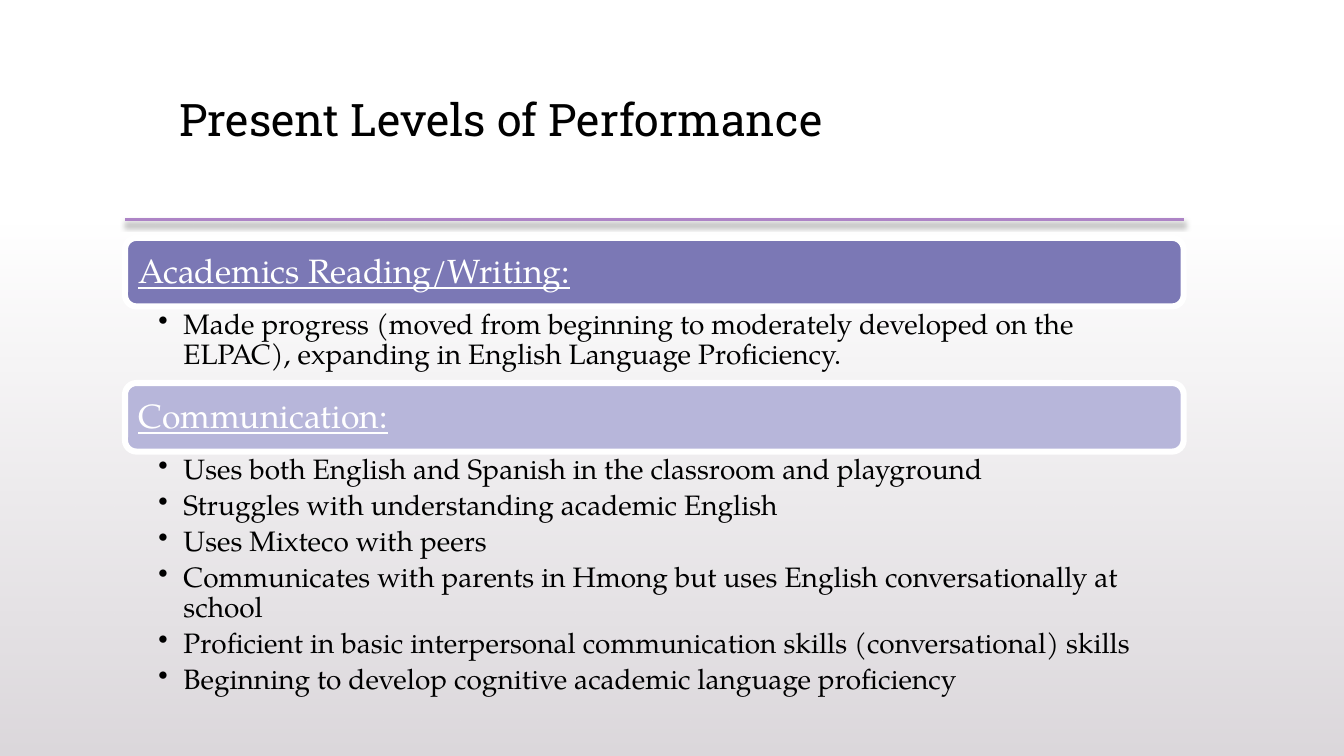
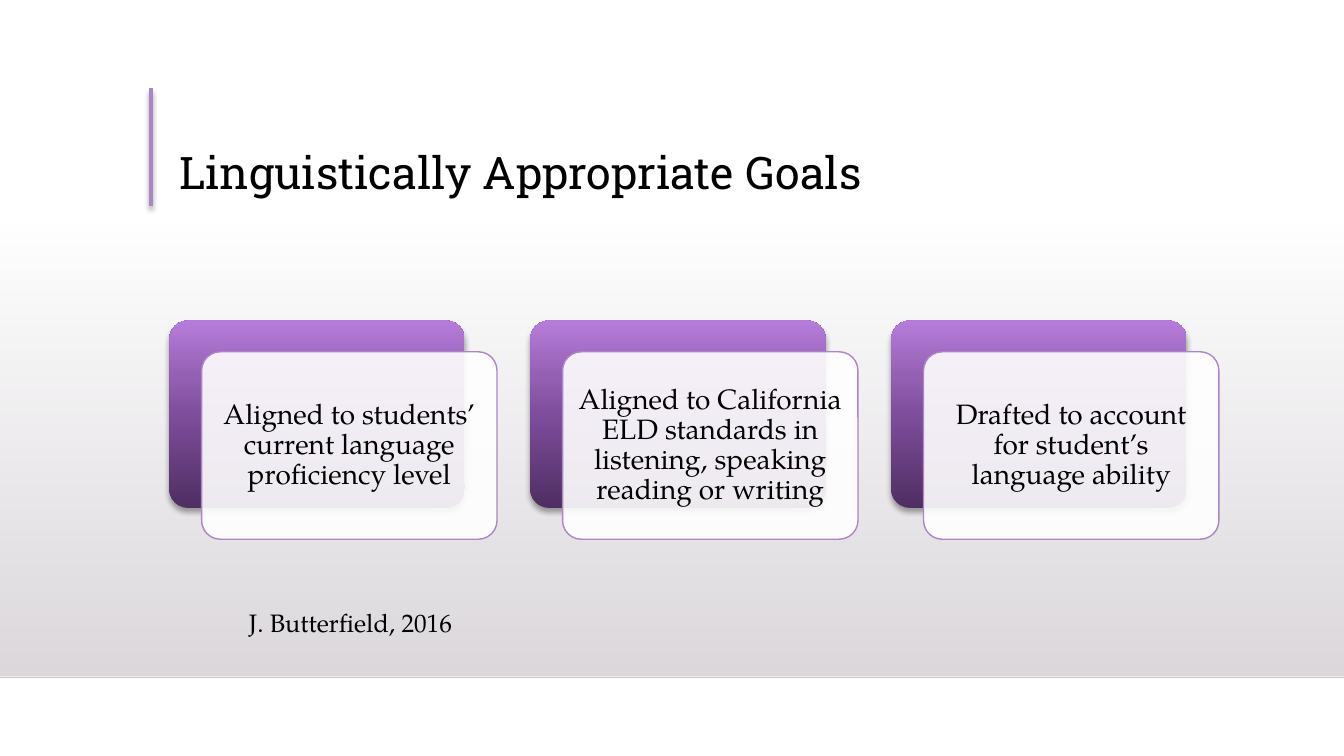
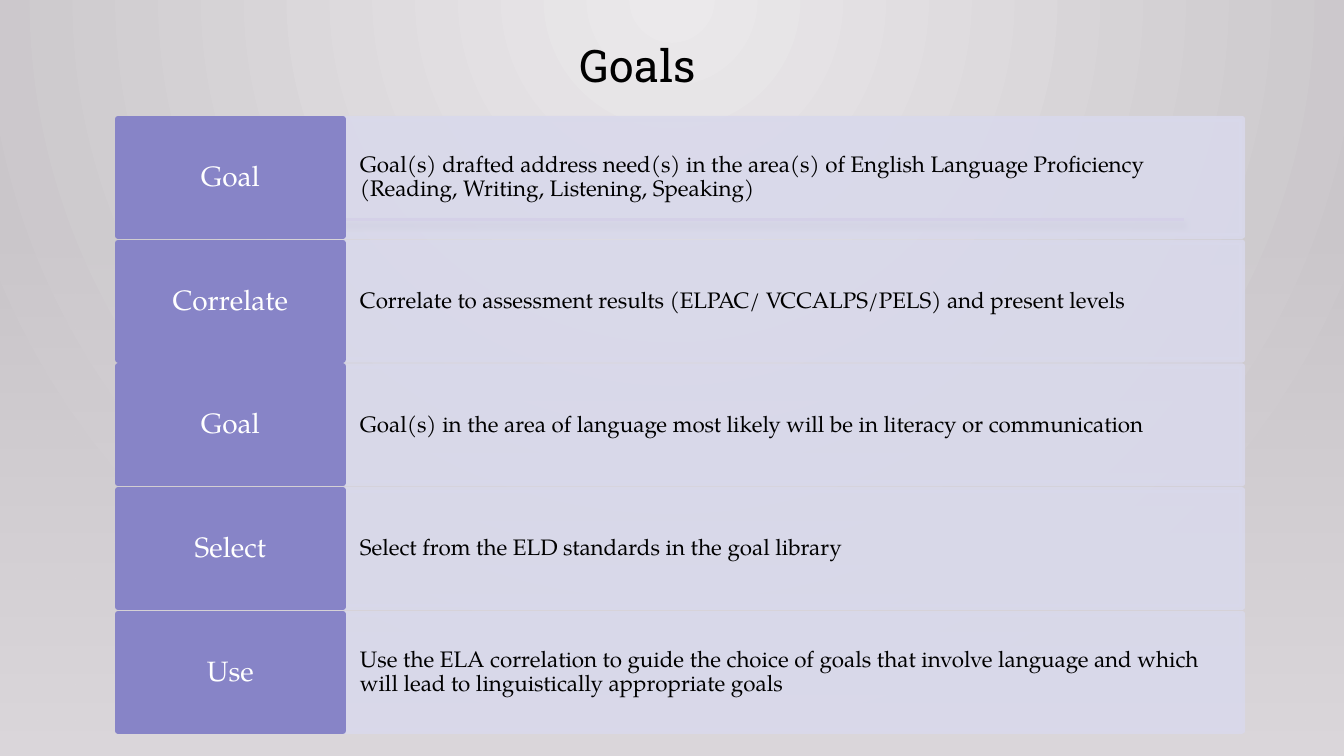
"""Build three slides on performance levels and linguistically appropriate goals."""
import lxml.etree
import pptx
import pptx.dml.color
import pptx.enum.shapes
import pptx.enum.text
import pptx.oxml.ns
import pptx.util

RGBColor = pptx.dml.color.RGBColor
Inches = pptx.util.Inches
Pt = pptx.util.Pt
qn = pptx.oxml.ns.qn
SHAPE = pptx.enum.shapes.MSO_SHAPE
ALIGN = pptx.enum.text.PP_ALIGN
ANCHOR = pptx.enum.text.MSO_ANCHOR

WIDTH, HEIGHT = 13.33, 7.5
TITLE_FONT, BODY_FONT = "Roboto Slab", "TeX Gyre Pagella"

BLACK = RGBColor(0x00, 0x00, 0x00)
WHITE = RGBColor(0xFF, 0xFF, 0xFF)
ACCENT = RGBColor(0xAD, 0x84, 0xC6)
MIST = RGBColor(0xDC, 0xD8, 0xDC)
GLOW = RGBColor(0xEB, 0xE9, 0xEB)
HAZE = RGBColor(0xC8, 0xC4, 0xC8)
HEADER_DARK = RGBColor(0x7B, 0x78, 0xB5)
HEADER_LIGHT = RGBColor(0xB7, 0xB6, 0xDA)
LABEL = RGBColor(0x87, 0x84, 0xC7)
PANEL = RGBColor(0xD9, 0xD9, 0xEB)

BAND_STOPS = [(0, MIST, 0), (100, MIST, 100)]
GLOW_STOPS = [(0, GLOW, 100), (100, HAZE, 100)]
CARD_STOPS = [
    (0, RGBColor(0x4F, 0x2E, 0x62), 100),
    (50, RGBColor(0x7E, 0x4D, 0x9C), 100),
    (70, RGBColor(0x94, 0x60, 0xB3), 100),
    (100, RGBColor(0xB6, 0x7C, 0xDA), 100),
]

LEVELS_TITLE = "Present Levels of Performance"
LEVELS = [
    ("Academics Reading/Writing:", HEADER_DARK, 2.36, 0.73, [
        "Made progress (moved from beginning to moderately developed on the "
        "ELPAC), expanding in English Language Proficiency.",
    ]),
    ("Communication:", HEADER_LIGHT, 3.8, 2.83, [
        "Uses both English and Spanish in the classroom and playground",
        "Struggles with understanding academic English",
        "Uses Mixteco with peers",
        "Communicates with parents in Hmong but uses English conversationally at school",
        "Proficient in basic interpersonal communication skills (conversational) skills",
        "Beginning to develop cognitive academic language proficiency",
    ]),
]

CARDS_TITLE = "Linguistically Appropriate Goals"
CARDS = [
    "Aligned to students’ current language proficiency level",
    "Aligned to California ELD standards in listening, speaking reading or writing",
    "Drafted to account for student’s language ability",
]
CARDS_SOURCE = "J. Butterfield, 2016"

GOALS_TITLE = "Goals"
GOALS = [
    ("Goal", "Goal(s) drafted address need(s) in the area(s) of English Language "
             "Proficiency (Reading, Writing, Listening, Speaking)"),
    ("Correlate", "Correlate to assessment results (ELPAC/ VCCALPS/PELS) and present levels"),
    ("Goal", "Goal(s) in the area of language most likely will be in literacy or communication"),
    ("Select", "Select from the ELD standards in the goal library"),
    ("Use", "Use the ELA correlation to guide the choice of goals that involve language "
            "and which will lead to linguistically appropriate goals"),
]


def add_element(parent, tag, **attributes):
    element = lxml.etree.SubElement(parent, qn(tag))
    for name, value in attributes.items():
        element.set(name, str(value))
    return element


def set_alpha(color_parent, percent):
    color = color_parent.find(".//" + qn("a:srgbClr"))
    add_element(color, "a:alpha", val=percent * 1000)


def set_gradient(fill, parent, stops, angle=None):
    fill.solid()
    fill.fore_color.rgb = stops[0][1]
    solid = parent.find(qn("a:solidFill"))
    gradient = lxml.etree.Element(qn("a:gradFill"), rotWithShape="1")
    stop_list = add_element(gradient, "a:gsLst")
    for position, color, opacity in stops:
        stop = add_element(stop_list, "a:gs", pos=position * 1000)
        add_element(stop, "a:srgbClr", val=color)
        if opacity < 100:
            set_alpha(stop, opacity)
    if angle is None:
        circle = add_element(gradient, "a:path", path="circle")
        add_element(circle, "a:fillToRect", l=43000, t=0, r=43000, b=100000)
    else:
        add_element(gradient, "a:lin", ang=angle * 60000, scaled=0)
    parent.replace(solid, gradient)


def add_shadow(effects):
    shadow = add_element(effects, "a:outerShdw", blurRad=Pt(4), dist=Pt(3),
                         dir=90 * 60000, algn="ctr", rotWithShape=0)
    add_element(shadow, "a:srgbClr", val=BLACK)
    set_alpha(shadow, 35)


def add_line(slide, start, end, color, width, opacity=100, shadow=False):
    points = [Inches(value) for value in (*start, *end)]
    line = slide.shapes.add_connector(pptx.enum.shapes.MSO_CONNECTOR.STRAIGHT, *points)
    line.line.color.rgb = color
    line.line.width = Pt(width)
    properties = line._element.spPr
    if opacity < 100:
        set_alpha(properties, opacity)
    effects = add_element(properties, "a:effectLst")
    if shadow:
        add_shadow(effects)


def add_box(slide, kind, area, fill=None, line=None, line_width=1, opacity=100):
    shape = slide.shapes.add_shape(kind, *[Inches(value) for value in area])
    shape.shadow.inherit = False
    properties = shape._element.spPr
    if fill is not None:
        shape.fill.solid()
        shape.fill.fore_color.rgb = fill
        if opacity < 100:
            set_alpha(properties.find(qn("a:solidFill")), opacity)
    if line is None:
        shape.line.fill.background()
    else:
        shape.line.color.rgb = line
        shape.line.width = Pt(line_width)
    return shape


def write(shape, texts, size, color=BLACK, font=BODY_FONT, align=ALIGN.LEFT,
          anchor=ANCHOR.MIDDLE, insets=(0.1, 0.05, 0.1, 0.05), spacing=0.9,
          bullets=False, underline=False):
    frame = shape.text_frame
    frame.word_wrap = True
    frame.vertical_anchor = anchor
    (frame.margin_left, frame.margin_top,
     frame.margin_right, frame.margin_bottom) = [Inches(value) for value in insets]
    frame.text = "\n".join(texts)
    for paragraph in frame.paragraphs:
        if bullets:
            properties = paragraph._p.get_or_add_pPr()
            properties.set("marL", str(Inches(0.25)))
            properties.set("indent", str(-Inches(0.25)))
            add_element(properties, "a:buChar", char="•")
            paragraph.space_after = Pt(4)
        paragraph.alignment = align
        paragraph.line_spacing = spacing
        for run in paragraph.runs:
            run.font.name = font
            run.font.size = Pt(size)
            run.font.color.rgb = color
            run.font.underline = underline


def add_text(slide, area, texts, size, **style):
    box = slide.shapes.add_textbox(*[Inches(value) for value in area])
    write(box, texts, size, **style)


def add_title(slide, text, area, align=ALIGN.LEFT):
    add_text(slide, area, [text], 32, font=TITLE_FONT, align=align, anchor=ANCHOR.BOTTOM)


def add_band(slide, top, bottom):
    band = add_box(slide, SHAPE.RECTANGLE, (0, top, WIDTH, bottom - top))
    set_gradient(band.fill, band._element.spPr, BAND_STOPS, 90)


def add_rule(slide):
    add_line(slide, (1.24, 2.18), (11.74, 2.18), ACCENT, 2.5, shadow=True)


def build_levels(slide):
    left, width, header_height = 1.24, 10.5, 0.68
    add_band(slide, 2.21, HEIGHT)
    add_rule(slide)
    add_title(slide, LEVELS_TITLE, (1.68, 0.88, 10.41, 0.62))
    for heading, color, top, list_height, points in LEVELS:
        header = add_box(slide, SHAPE.ROUNDED_RECTANGLE, (left, top, width, header_height),
                         color, WHITE, 4.33)
        write(header, [heading], 24, color=WHITE, insets=(0.1,) * 4, underline=True)
        add_text(slide, (left, top + header_height + 0.01, width, list_height), points, 20,
                 anchor=ANCHOR.TOP, insets=(0.33, 0.03, 0.16, 0.03), bullets=True)


def build_cards(slide):
    left, top, width, height, pitch = 1.68, 3.18, 2.93, 1.86, 3.58
    shift_right, shift_down = 0.32, 0.31
    add_band(slide, 2.2, 6.7)
    add_line(slide, (0, 6.72), (WIDTH, 6.72), BLACK, 1, opacity=20)
    add_line(slide, (1.5, 0.87), (1.5, 2.04), ACCENT, 3, shadow=True)
    add_title(slide, CARDS_TITLE, (1.68, 0.88, 10.41, 1.15))
    for index, text in enumerate(CARDS):
        x = left + index * pitch
        back = add_box(slide, SHAPE.ROUNDED_RECTANGLE, (x, top, width, height))
        set_gradient(back.fill, back._element.spPr, CARD_STOPS, 270)
        add_shadow(back._element.spPr.find(qn("a:effectLst")))
        front = add_box(slide, SHAPE.ROUNDED_RECTANGLE,
                        (x + shift_right, top + shift_down, width, height),
                        WHITE, ACCENT, 1, opacity=90)
        for card in (back, front):
            card.adjustments[0] = 0.1
        write(front, [text], 20, align=ALIGN.CENTER, insets=(0.08,) * 4)
    add_text(slide, (2.37, 5.98, 4.69, 0.4), [CARDS_SOURCE], 18,
             anchor=ANCHOR.TOP, spacing=1.0)


def build_goals(slide):
    left, label_width, panel_width, height = 1.17, 2.23, 8.92, 1.16
    first_top, last_top = 1.18, 6.09
    pitch = (last_top - first_top) / (len(GOALS) - 1)
    background = slide.background.fill
    background.solid()
    set_gradient(background, slide._element.find(".//" + qn("p:bgPr")), GLOW_STOPS)
    add_title(slide, GOALS_TITLE, (1.12, 0.25, 10.41, 0.71), ALIGN.CENTER)
    add_rule(slide)
    add_band(slide, 2.21, HEIGHT)
    for index, (name, text) in enumerate(GOALS):
        top = first_top + index * pitch
        panel = add_box(slide, SHAPE.RECTANGLE, (left + label_width, top, panel_width, height),
                        PANEL, PANEL, 4.33, opacity=90)
        set_alpha(panel._element.spPr.find(qn("a:ln")), 90)
        write(panel, [text], 16, insets=(0.17, 0.29, 0.17, 0.29))
        label = add_box(slide, SHAPE.RECTANGLE, (left, top, label_width, height),
                        LABEL, LABEL, 4.33)
        write(label, [name], 20, color=WHITE, align=ALIGN.CENTER,
              insets=(0.12, 0.11, 0.12, 0.11))


def main():
    presentation = pptx.Presentation()
    presentation.slide_width = Inches(WIDTH)
    presentation.slide_height = Inches(HEIGHT)
    for build in (build_levels, build_cards, build_goals):
        build(presentation.slides.add_slide(presentation.slide_layouts[6]))
    presentation.save("out.pptx")


if __name__ == "__main__":
    main()
